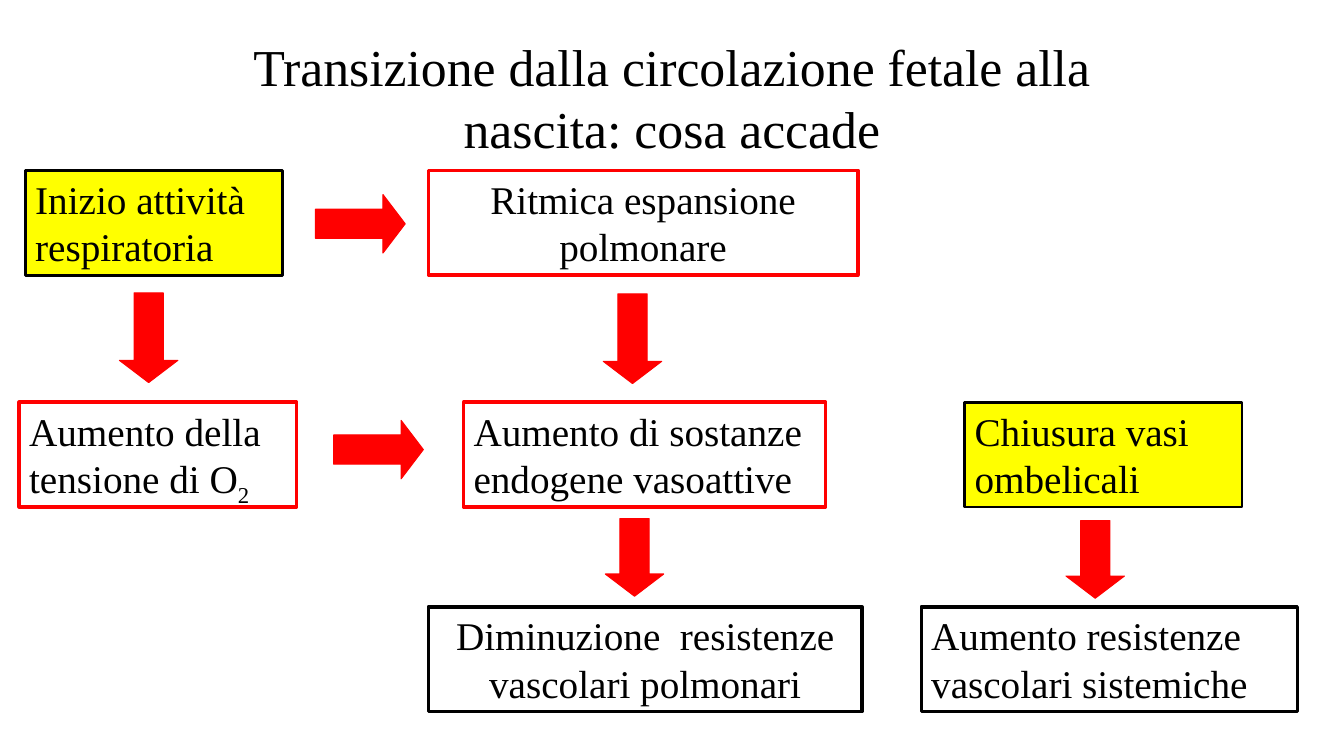
from pptx import Presentation
from pptx.dml.color import RGBColor
from pptx.enum.shapes import MSO_SHAPE as Preset
from pptx.enum.text import MSO_ANCHOR as Anchor, PP_ALIGN as Align
from pptx.util import Inches, Pt

SLIDE_WIDTH, SLIDE_HEIGHT = Inches(13.33), Inches(7.5)
FONT = "Times New Roman"
BLACK, WHITE, RED, YELLOW = "000000", "FFFFFF", "FF0000", "FFFF00"
TOP_ROW, MIDDLE_ROW, BOTTOM_ROW = 22.53, 53.2, 80.27
BOX_HEIGHT = 13.87
ARROW_THICKNESS = 7.73
LONG_ARROW, SHORT_ARROW = 6.68, 5.78

BOXES = [
    ("Inizio attività respiratoria", 1.88, TOP_ROW, 19.13, YELLOW, BLACK, Align.LEFT),
    ("Ritmica espansione polmonare", 31.88, TOP_ROW, 31.95, WHITE, RED, Align.CENTER),
    ("Aumento della\ntensione di O₂", 1.43, MIDDLE_ROW, 20.63, WHITE, RED, Align.LEFT),
    ("Aumento di sostanze\nendogene vasoattive", 34.5, MIDDLE_ROW, 26.93, WHITE, RED, Align.LEFT),
    ("Chiusura vasi ombelicali", 71.78, MIDDLE_ROW, 20.63, YELLOW, BLACK, Align.LEFT),
    ("Diminuzione  resistenze vascolari polmonari", 31.88, BOTTOM_ROW, 32.25, WHITE, BLACK, Align.CENTER),
    ("Aumento resistenze\nvascolari sistemiche", 68.55, BOTTOM_ROW, 27.98, WHITE, BLACK, Align.LEFT),
]

ARROWS = [
    (26.81, 29.6, LONG_ARROW, 0),
    (28.16, 59.47, LONG_ARROW, 0),
    (11.06, 44.67, LONG_ARROW, 90),
    (47.06, 44.8, LONG_ARROW, 90),
    (47.21, 73.73, SHORT_ARROW, 90),
    (81.49, 74, SHORT_ARROW, 90),
]


def color(value):
    """Return the colour for a hex string."""
    return RGBColor.from_string(value)


def place(left, top, width, height):
    """Turn percentages of the slide into a position and size."""
    return (
        int(SLIDE_WIDTH * left / 100),
        int(SLIDE_HEIGHT * top / 100),
        int(SLIDE_WIDTH * width / 100),
        int(SLIDE_HEIGHT * height / 100),
    )


def style_shape(shape, fill, line, line_width):
    """Give a shape a plain fill and outline without shadow."""
    shape.shadow.inherit = False
    shape.fill.solid()
    shape.fill.fore_color.rgb = color(fill)
    shape.line.color.rgb = color(line)
    shape.line.width = Pt(line_width)


def write_text(text_frame, text, size, alignment, anchor):
    """Write text, setting a subscript two as a lowered run."""
    text_frame.word_wrap = True
    text_frame.vertical_anchor = anchor
    text_frame.text = text.replace("₂", "")
    if text.endswith("₂"):
        subscript = text_frame.paragraphs[-1].add_run()
        subscript.text = "2"
        subscript._r.get_or_add_rPr().set("baseline", "-25000")
    for paragraph in text_frame.paragraphs:
        paragraph.alignment = alignment
        for run in paragraph.runs:
            run.font.name = FONT
            run.font.size = Pt(size)
            run.font.color.rgb = color(BLACK)


def add_title(slide, text):
    """Add the centred heading."""
    title = slide.shapes.add_textbox(*place(12.5, 5.47, 75, 14.67))
    write_text(title.text_frame, text, 37, Align.CENTER, Anchor.MIDDLE)


def add_box(slide, text, left, top, width, fill, line, alignment):
    """Add one step of the flow."""
    box = slide.shapes.add_shape(Preset.RECTANGLE, *place(left, top, width, BOX_HEIGHT))
    style_shape(box, fill, line, 2 if fill == YELLOW else 2.5)
    write_text(box.text_frame, text, 28, alignment, Anchor.TOP)


def add_arrow(slide, center_x, center_y, length, rotation):
    """Add a red block arrow around its centre."""
    left, top = center_x - length / 2, center_y - ARROW_THICKNESS / 2
    arrow = slide.shapes.add_shape(Preset.RIGHT_ARROW, *place(left, top, length, ARROW_THICKNESS))
    arrow.adjustments[0] = 0.5
    arrow.adjustments[1] = 0.38
    arrow.rotation = rotation
    style_shape(arrow, RED, RED, 0.75)


def main():
    """Build and save the slide."""
    presentation = Presentation()
    presentation.slide_width, presentation.slide_height = SLIDE_WIDTH, SLIDE_HEIGHT
    slide = presentation.slides.add_slide(presentation.slide_layouts[6])
    add_title(slide, "Transizione dalla circolazione fetale alla nascita: cosa accade")
    for box in BOXES:
        add_box(slide, *box)
    for arrow in ARROWS:
        add_arrow(slide, *arrow)
    presentation.save("out.pptx")


if __name__ == "__main__":
    main()
